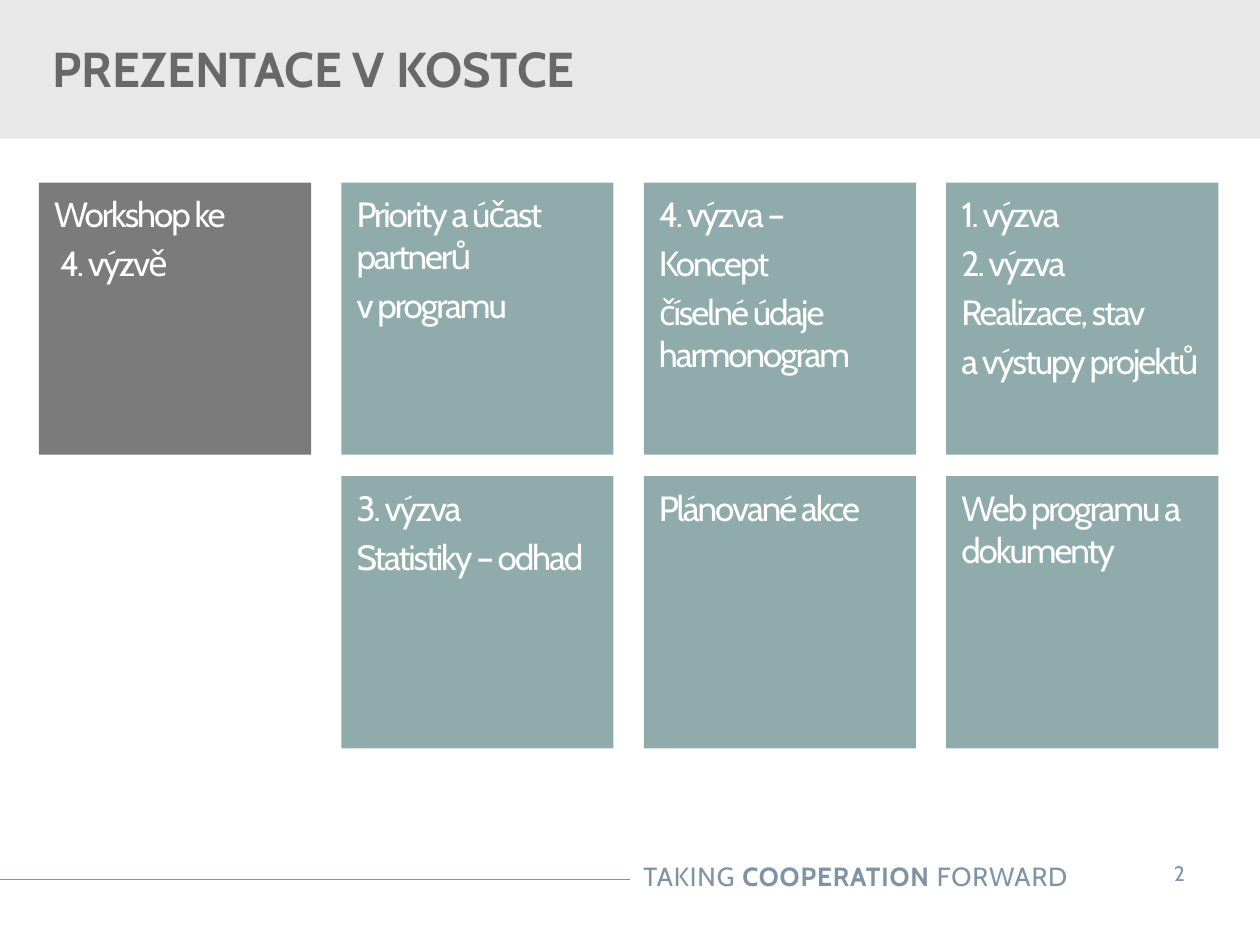
from dataclasses import dataclass

from lxml.etree import SubElement
from pptx import Presentation
from pptx.dml.color import RGBColor as RGB
from pptx.enum.shapes import MSO_CONNECTOR as CONN, MSO_SHAPE as SHAPE
from pptx.enum.text import MSO_ANCHOR as ANCHOR, PP_ALIGN as ALIGN
from pptx.oxml.ns import qn
from pptx.util import Inches, Pt


@dataclass(frozen=True)
class Theme:
    font: str = "Cabin"
    band: str = "E8E8E8"
    title: str = "686868"
    lead_tile: str = "7B7B7B"
    tile: str = "90ABAB"
    tile_text: str = "FFFFFF"
    footer: str = "7E93A5"
    title_size: float = 28
    tile_size: float = 20
    footer_size: float = 15
    number_size: float = 12


def write(tf, paragraphs, font, size, color, bold=False, spacing=0, before=0,
          align=ALIGN.LEFT, anchor=ANCHOR.TOP, insets=(0.1, 0.05, 0.1, 0.05), wrap=True):
    tf.word_wrap = wrap
    tf.vertical_anchor = anchor
    tf.margin_left, tf.margin_top, tf.margin_right, tf.margin_bottom = map(Inches, insets)
    for i, runs in enumerate(paragraphs):
        p = tf.add_paragraph() if i else tf.paragraphs[0]
        p.alignment = align
        p.space_before = Pt(before if i else 0)
        for text, strong in [(runs, bold)] if isinstance(runs, str) else runs:
            r = p.add_run()
            r.text = text
            f = r.font
            f.name, f.size, f.bold = font, Pt(size), strong
            f.color.rgb = RGB.from_string(color)
            if spacing:
                r._r.get_or_add_rPr().set("spc", str(round(spacing * 100)))


class Deck:
    def __init__(self, prs, theme):
        self.theme = theme
        self.s = prs.slides.add_slide(prs.slide_layouts[6])

    def rect(self, x, y, w, h, fill):
        sp = self.s.shapes.add_shape(SHAPE.RECTANGLE, *map(Inches, (x, y, w, h)))
        sp.shadow.inherit = False
        sp.fill.solid()
        sp.fill.fore_color.rgb = RGB.from_string(fill)
        sp.line.fill.background()
        return sp

    def line(self, x1, y1, x2, y2, color, width):
        ln = self.s.shapes.add_connector(CONN.STRAIGHT, *map(Inches, (x1, y1, x2, y2)))
        ln.line.color.rgb = RGB.from_string(color)
        ln.line.width = Pt(width)
        SubElement(ln._element.spPr, qn("a:effectLst"))

    def text(self, x, y, w, h, paragraphs, **fmt):
        box = self.s.shapes.add_textbox(*map(Inches, (x, y, w, h)))
        write(box.text_frame, paragraphs, self.theme.font, **fmt)

    def tile(self, x, y, side, paragraphs, fill):
        t = self.theme
        sp = self.rect(x, y, side, side, fill)
        write(sp.text_frame, paragraphs, t.font, size=t.tile_size, color=t.tile_text,
              spacing=-1.2, before=4, insets=(0.12, 0.08, 0.12, 0.12))


TILES = [
    (0, 0, ["Workshop ke", " 4. výzvě"]),
    (0, 1, ["Priority a účast partnerů", "v programu"]),
    (0, 2, ["4. výzva –", "Koncept", "číselné údaje harmonogram"]),
    (0, 3, ["1. výzva", "2. výzva", "Realizace, stav", "a výstupy projektů"]),
    (1, 1, ["3. výzva", "Statistiky – odhad"]),
    (1, 2, ["Plánované akce"]),
    (1, 3, ["Web programu a dokumenty"]),
]
LEFT, TOP, SIDE = 0.31, 1.45, 2.16
COL_STEP, ROW_STEP = 2.4, 2.33


def main():
    prs = Presentation()
    prs.slide_width, prs.slide_height = Inches(10), Inches(7.5)
    t = Theme()
    deck = Deck(prs, t)

    deck.line(0, 6.98, 5, 6.98, t.footer, 0.75)
    deck.rect(0, 0, 10, 1.1, t.band)
    deck.text(3.88, 6.78, 4.69, 0.35,
              [[("TAKING ", False), ("COOPERATION", True), (" FORWARD", False)]],
              size=t.footer_size, color=t.footer, spacing=0.5, align=ALIGN.RIGHT)
    deck.text(8.99, 6.73, 0.74, 0.4, ["2"], size=t.number_size, color=t.footer,
              align=ALIGN.CENTER, insets=(0.2, 0.1, 0.2, 0.1), wrap=False)
    deck.text(0.08, 0.16, 7.1, 0.75, ["PREZENTACE V KOSTCE"], size=t.title_size,
              color=t.title, bold=True, anchor=ANCHOR.MIDDLE,
              insets=(0.34, 0.05, 0.1, 0.05))

    for row, col, paragraphs in TILES:
        deck.tile(LEFT + col * COL_STEP, TOP + row * ROW_STEP, SIDE, paragraphs,
                  t.tile if col else t.lead_tile)

    prs.save("out.pptx")


if __name__ == "__main__":
    main()
